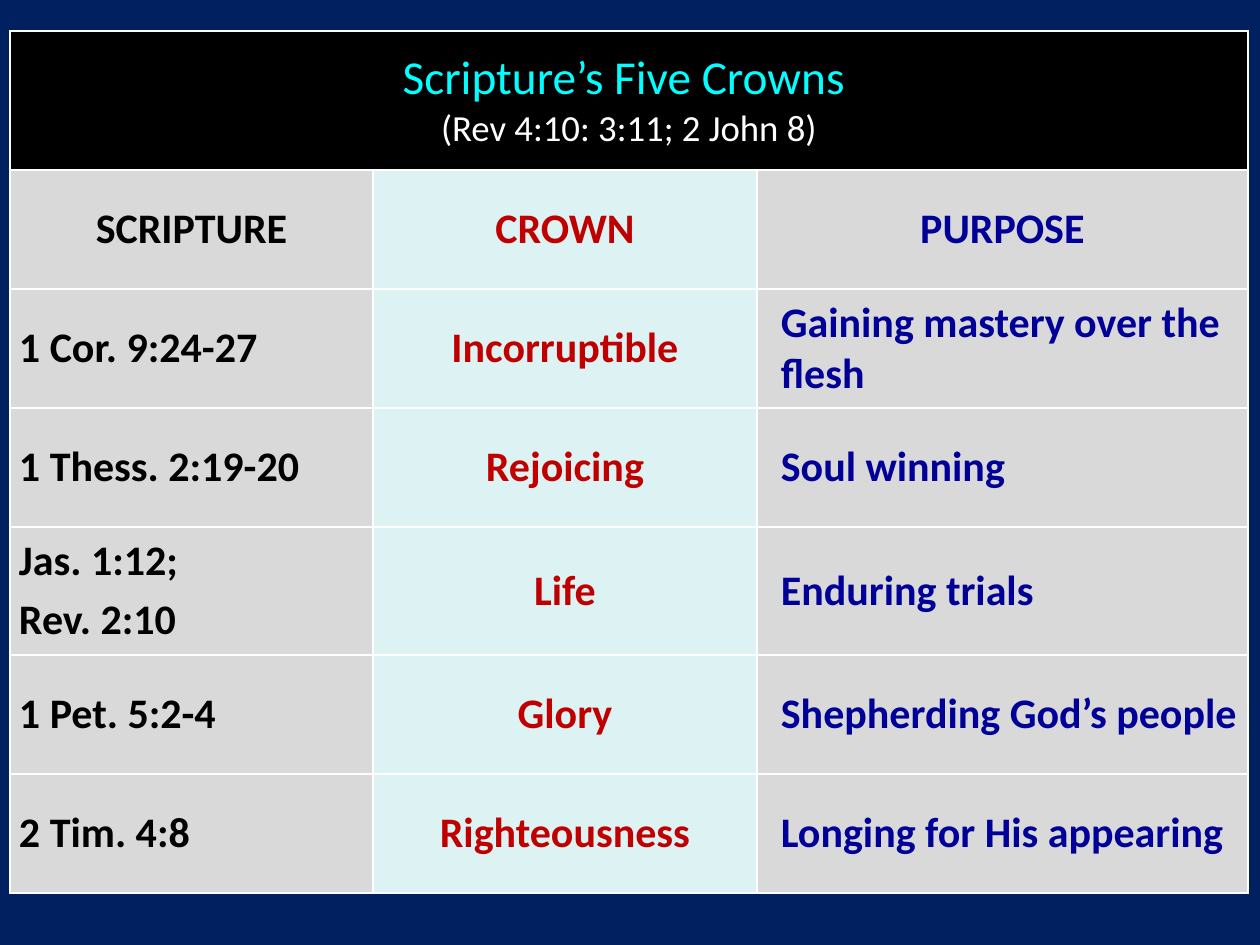
import pptx
import pptx.util
import pptx.dml.color
import pptx.enum.text
import pptx.oxml
import pptx.oxml.ns
import lxml.etree

RGB = pptx.dml.color.RGBColor
ALIGN = pptx.enum.text.PP_ALIGN
NAVY = RGB(0x00, 0x20, 0x60)
BLACK = RGB(0x00, 0x00, 0x00)
WHITE = RGB(0xFF, 0xFF, 0xFF)
CYAN = RGB(0x00, 0xFF, 0xFF)
GRAY = RGB(0xD9, 0xD9, 0xD9)
MINT = RGB(0xDD, 0xF3, 0xF3)
RED = RGB(0xC0, 0x00, 0x00)
BLUE = RGB(0x00, 0x00, 0x99)

COLUMNS = [
    (363, GRAY, BLACK, ALIGN.LEFT, 0),
    (384, MINT, RED, ALIGN.CENTER, 0),
    (491, GRAY, BLUE, ALIGN.LEFT, 15),
]
ROW_HEIGHTS = [139, 119, 119, 119, 128, 119, 119]
TITLE = "Scripture’s Five Crowns "
REFERENCES = "(Rev 4:10: 3:11; 2 John 8)"
ROWS = [
    ("SCRIPTURE", "CROWN", "PURPOSE"),
    ("1 Cor. 9:24-27", "Incorruptible", "Gaining mastery over the flesh"),
    ("1 Thess. 2:19-20", "Rejoicing", "Soul winning"),
    ("Jas. 1:12;\nRev. 2:10", "Life", "Enduring trials"),
    ("1 Pet. 5:2-4", "Glory", "Shepherding God’s people"),
    ("2 Tim. 4:8", "Righteousness", "Longing for His appearing"),
]


def px(n):
    return pptx.util.Emu(round(n * 914400 / 126))


class Deck:
    font = "Calibri"
    body_size = 24

    def __init__(self, width, height, color):
        self.prs = pptx.Presentation()
        self.prs.slide_width = px(width)
        self.prs.slide_height = px(height)
        self.s = self.prs.slides.add_slide(self.prs.slide_layouts[6])
        fill = self.s.background.fill
        fill.solid()
        fill.fore_color.rgb = color

    def table(self, left, top, widths, heights):
        frame = self.s.shapes.add_table(
            len(heights), len(widths), px(left), px(top),
            px(sum(widths)), px(sum(heights)))
        table = frame.table
        table.first_row = False
        table.horz_banding = False
        for column, width in zip(table.columns, widths):
            column.width = px(width)
        for row, height in zip(table.rows, heights):
            row.height = px(height)
        return table

    def borders(self, cell, color):
        tcPr = cell._tc.get_or_add_tcPr()
        for i, side in enumerate(("lnL", "lnR", "lnT", "lnB")):
            ln = lxml.etree.Element(pptx.oxml.ns.qn(f"a:{side}"), w="12700")
            fill = lxml.etree.SubElement(ln, pptx.oxml.ns.qn("a:solidFill"))
            lxml.etree.SubElement(
                fill, pptx.oxml.ns.qn("a:srgbClr"), val=str(color))
            tcPr.insert(i, ln)

    def cell(self, cell, color):
        cell.fill.solid()
        cell.fill.fore_color.rgb = color
        cell.vertical_anchor = pptx.enum.text.MSO_ANCHOR.MIDDLE
        cell.margin_left = cell.margin_right = px(9)
        cell.margin_top = cell.margin_bottom = px(5)
        self.borders(cell, WHITE)

    def text(self, cell, text, color, align, indent):
        tf = cell.text_frame
        tf.text = text
        for i, p in enumerate(tf.paragraphs):
            p.alignment = align
            if indent:
                p._p.get_or_add_pPr().set("marL", str(px(indent)))
            if i:
                p.space_before = pptx.util.Pt(4.8)
            p.font.name = self.font
            p.font.size = pptx.util.Pt(self.body_size)
            p.font.bold = True
            p.font.color.rgb = color

    def heading(self, cell, lines):
        p = cell.text_frame.paragraphs[0]
        p.alignment = ALIGN.CENTER
        p.font.name = self.font
        for i, (text, size, color) in enumerate(lines):
            if i:
                p.add_line_break()
            r = p.add_run()
            r.text = text
            r.font.size = pptx.util.Pt(size)
            r.font.bold = False
            r.font.color.rgb = color


def main():
    deck = Deck(1260, 945, NAVY)
    table = deck.table(10, 31, [c[0] for c in COLUMNS], ROW_HEIGHTS)
    for i in range(len(COLUMNS)):
        deck.cell(table.cell(0, i), BLACK)
    table.cell(0, 0).merge(table.cell(0, len(COLUMNS) - 1))
    deck.heading(table.cell(0, 0), [(TITLE, 27, CYAN), (REFERENCES, 21, WHITE)])
    for r, row in enumerate(ROWS, 1):
        for c, text in enumerate(row):
            width, fill, color, align, indent = COLUMNS[c]
            if r == 1:
                align, indent = ALIGN.CENTER, 0
            deck.cell(table.cell(r, c), fill)
            deck.text(table.cell(r, c), text, color, align, indent)
    deck.prs.save("out.pptx")


if __name__ == "__main__":
    main()
